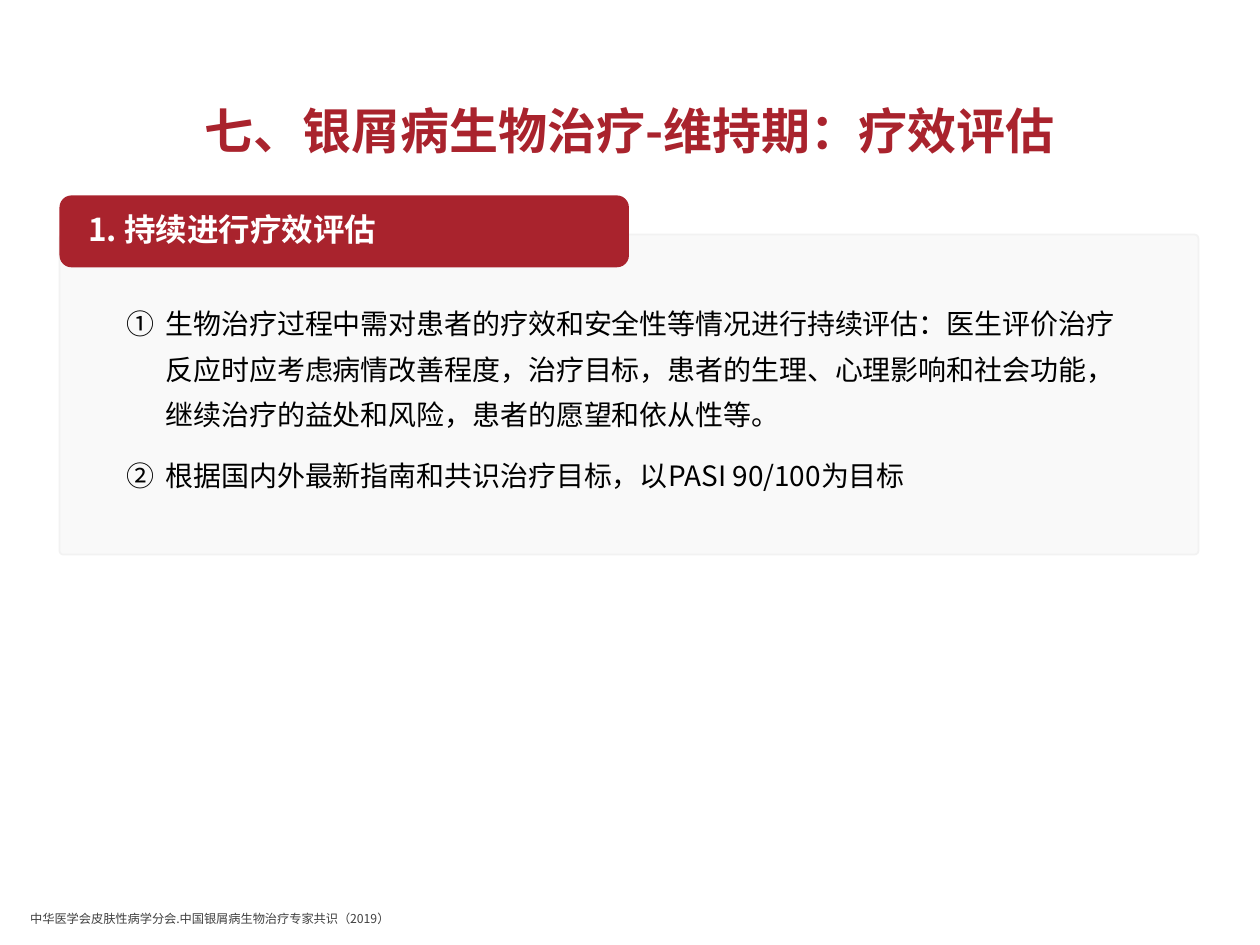
from pptx import Presentation
from pptx.dml.color import RGBColor
from pptx.enum.shapes import MSO_SHAPE
from pptx.enum.text import MSO_ANCHOR, PP_ALIGN
from pptx.oxml.ns import qn
from pptx.util import Cm, Pt
from lxml import etree

ROUNDED = MSO_SHAPE.ROUNDED_RECTANGLE
TOP, MIDDLE, BOTTOM = MSO_ANCHOR.TOP, MSO_ANCHOR.MIDDLE, MSO_ANCHOR.BOTTOM
LEFT, CENTER = PP_ALIGN.LEFT, PP_ALIGN.CENTER
FONT = "Noto Sans CJK SC"
RED = "A9232D"


def color(value):
    return RGBColor.from_string(value)


def write(s, *texts, size, fill="000000", bold=False, align=LEFT, anchor=TOP,
          spacing=None, before=0, insets=(0.25, 0.13, 0.25, 0.13), hanging=None):
    """Fill a shape with paragraphs; hanging (cm) gives circled numbers."""
    tf = s.text_frame
    tf.word_wrap = True
    tf.vertical_anchor = anchor
    tf.margin_left, tf.margin_top, tf.margin_right, tf.margin_bottom = map(Cm, insets)
    for i, text in enumerate(texts):
        p = tf.add_paragraph() if i else tf.paragraphs[0]
        p.alignment = align
        if spacing:
            p.line_spacing = spacing
        if i:
            p.space_before = Pt(before)
        if hanging:
            pPr = p._p.get_or_add_pPr()
            pPr.set("marL", str(Cm(hanging)))
            pPr.set("indent", str(-Cm(hanging)))
            etree.SubElement(pPr, qn("a:buAutoNum"), type="circleNumDbPlain")
        r = p.add_run()
        r.text = text
        r.font.name, r.font.size, r.font.bold = FONT, Pt(size), bold
        r.font.color.rgb = color(fill)
        etree.SubElement(r._r.get_or_add_rPr(), qn("a:ea"), typeface=FONT)


def add_text(slide, box, *texts, **fmt):
    write(slide.shapes.add_textbox(*map(Cm, box)), *texts, **fmt)


def add_rounded(slide, box, fill, radius, line=None):
    s = slide.shapes.add_shape(ROUNDED, *map(Cm, box))
    s.shadow.inherit = False
    s.adjustments[0] = radius
    s.fill.solid()
    s.fill.fore_color.rgb = color(fill)
    if line:
        s.line.color.rgb = color(line)
        s.line.width = Pt(1)
    else:
        s.line.fill.background()
    return s


def add_section(slide, box, heading, items):
    """Red heading tab overlapping a pale panel with a numbered list."""
    x, y, w, h = box
    tab_h, panel_drop = 1.45, 0.79
    # Panel and heading tab
    add_rounded(slide, (x, y + panel_drop, w, h - panel_drop), "F9F9F9", 0.012, "F2F2F2")
    tab = add_rounded(slide, (x, y, w / 2, tab_h), RED, 0.167)
    write(tab, heading, size=18, fill="FFFFFF", bold=True, anchor=MIDDLE,
          spacing=0.9, insets=(0.51, 0.13, 0.25, 0.13))
    # Numbered list
    add_text(slide, (x + 1.35, y + 2.01, w - 2.64, 10.13), *items, size=16,
             spacing=1.35, before=9, insets=(0, 0, 0, 0), hanging=0.79)


def main():
    prs = Presentation()
    prs.slide_width, prs.slide_height = Cm(25.4), Cm(19.05)
    slide = prs.slides.add_slide(prs.slide_layouts[6])

    # Title
    add_text(slide, (1.75, 1.73, 21.89, 1.93), "七、银屑病生物治疗-维持期：疗效评估",
             size=28, fill=RED, bold=True, align=CENTER, anchor=MIDDLE, spacing=0.9)
    # Source note
    add_text(slide, (0.36, 17.53, 23.83, 1.27),
             "中华医学会皮肤性病学分会.中国银屑病生物治疗专家共识（2019）",
             size=7, fill="404040", anchor=BOTTOM)
    # Assessment section
    add_section(slide, (1.2, 3.94, 22.96, 7.24), "1. 持续进行疗效评估", [
        "生物治疗过程中需对患者的疗效和安全性等情况进行持续评估：医生评价治疗反应时应考虑病情改善程度，"
        "治疗目标，患者的生理、心理影响和社会功能，继续治疗的益处和风险，患者的愿望和依从性等。",
        "根据国内外最新指南和共识治疗目标，以PASI 90/100为目标",
    ])
    prs.save("out.pptx")


if __name__ == "__main__":
    main()
